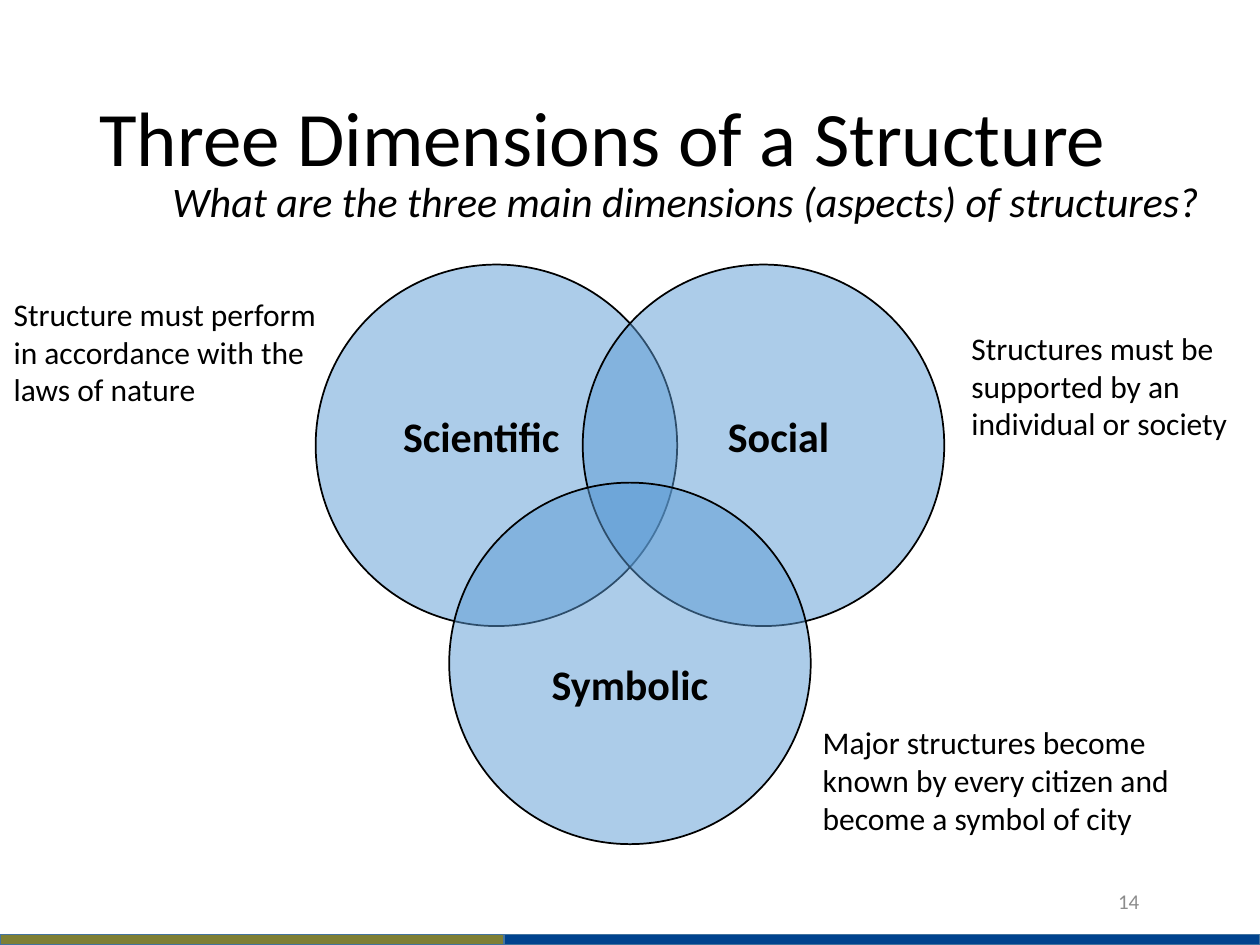
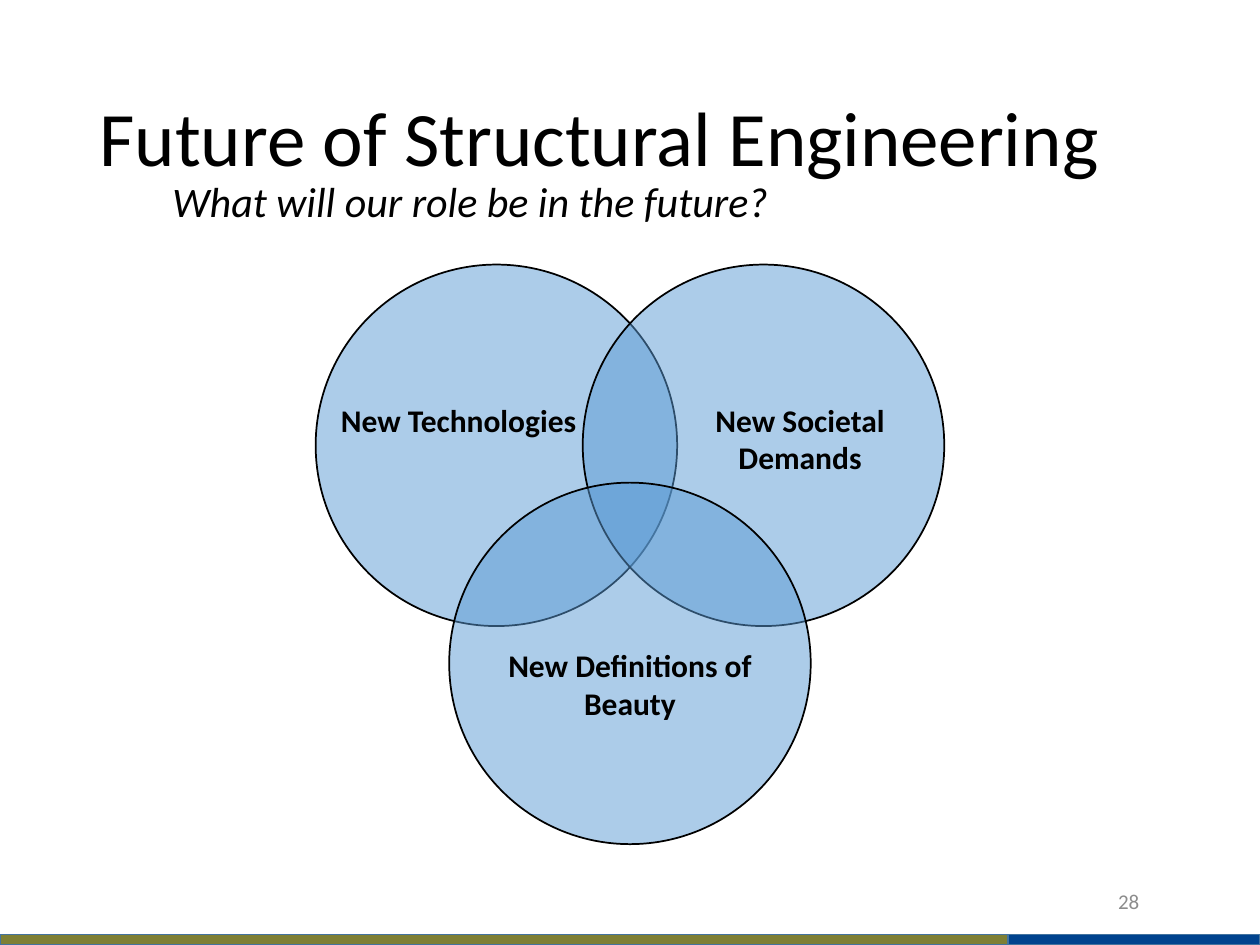
from pptx import Presentation
from pptx.dml.color import RGBColor
from pptx.enum.shapes import MSO_SHAPE as SHAPE
from pptx.enum.text import MSO_ANCHOR as ANCHOR, PP_ALIGN as ALIGN
from pptx.oxml.ns import qn
from pptx.util import Pt
from lxml.etree import SubElement

BLACK = RGBColor(0x00, 0x00, 0x00)
GREY = RGBColor(0x8C, 0x8C, 0x8C)
CIRCLE_BLUE = RGBColor(0x5B, 0x9B, 0xD5)
BAND_BLUE = RGBColor(0x00, 0x43, 0x8E)
BAND_OLIVE = RGBColor(0x7E, 0x7F, 0x34)
BAND_EDGE = RGBColor(0x43, 0x73, 0x9E)

WIDTH, HEIGHT = 720, 540
DIAMETER = 206.6
BAND_TOP, BAND_HEIGHT = 534, 6
# Horizontal offset of each circle's centre from the slide centre, and its top
CIRCLES = [(-76.3, 151.2), (76.3, 151.2), (0, 275.8)]

TITLE = {"size": Pt(44)}
QUESTION = {"size": Pt(24), "italic": True}
BIG_LABEL = {"size": Pt(24), "bold": True}
SMALL_LABEL = {"size": Pt(18), "bold": True}
NOTE = {"size": Pt(18)}
PAGE_NUMBER = {"size": Pt(12)}

# Labels and notes: text, (left, top, width, height)
SLIDES = [
    {
        "title": "Three Dimensions of a Structure",
        "question": "What are the three main dimensions (aspects) of structures?",
        "number": "14",
        "olive_share": 0.4,
        "label_style": BIG_LABEL,
        "labels": [
            ("Scientific", (198.7, 231.1, 152.6, 36)),
            ("Social", (368.6, 231.1, 152.6, 36)),
            ("Symbolic", (283.7, 373, 152.6, 36)),
        ],
        "notes": [
            ("Structure must perform in accordance with the laws of nature",
             (0.7, 164.9, 189.4, 72.7)),
            ("Structures must be supported by an individual or society",
             (548, 184.3, 165.6, 72.7)),
            ("Major structures become known by every citizen and become a symbol of city",
             (463, 409.7, 222.5, 72.7)),
        ],
    },
    {
        "title": "Future of Structural Engineering",
        "question": "What will our role be in the future?",
        "number": "28",
        "olive_share": 0.8,
        "label_style": SMALL_LABEL,
        "labels": [
            ("New Technologies", (185.8, 225.4, 152.6, 29)),
            ("New Societal Demands", (380.9, 225.4, 152.6, 51)),
            ("New Definitions of Beauty", (258.5, 365.8, 203, 51)),
        ],
        "notes": [],
    },
]


def add_text(slide, text, box, style, align=ALIGN.LEFT, anchor=ANCHOR.TOP, color=BLACK):
    frame = slide.shapes.add_textbox(*map(Pt, box)).text_frame
    frame.word_wrap = True
    frame.vertical_anchor = anchor
    paragraph = frame.paragraphs[0]
    paragraph.text = text
    paragraph.alignment = align
    font = paragraph.runs[0].font
    font.name = "Calibri"
    font.color.rgb = color
    for attribute, value in style.items():
        setattr(font, attribute, value)
    return paragraph


def add_filled(slide, kind, box, fill, edge, edge_width):
    shape = slide.shapes.add_shape(kind, *map(Pt, box))
    shape.shadow.inherit = False
    shape.fill.solid()
    shape.fill.fore_color.rgb = fill
    shape.line.color.rgb = edge
    shape.line.width = Pt(edge_width)
    return shape


deck = Presentation()
deck.slide_width, deck.slide_height = Pt(WIDTH), Pt(HEIGHT)

for content in SLIDES:
    slide = deck.slides.add_slide(deck.slide_layouts[6])

    title = add_text(slide, content["title"], (49.7, 28.8, 620.6, 104.4), TITLE,
                     anchor=ANCHOR.MIDDLE)
    title.line_spacing = 0.9
    add_text(slide, content["number"], (574.6, 500.4, 83.5, 28.8), PAGE_NUMBER,
             ALIGN.RIGHT, ANCHOR.MIDDLE, GREY)

    for offset, top in CIRCLES:
        left = (WIDTH - DIAMETER) / 2 + offset
        circle = add_filled(slide, SHAPE.OVAL, (left, top, DIAMETER, DIAMETER),
                            CIRCLE_BLUE, BLACK, 1)
        color = circle.fill._xPr.find(qn("a:solidFill"))[0]
        SubElement(color, qn("a:alpha"), val="50000")

    add_text(slide, content["question"], (91.4, 96.5, 622, 36), QUESTION)
    for label, box in content["labels"]:
        add_text(slide, label, box, content["label_style"], ALIGN.CENTER)
    for note, box in content["notes"]:
        add_text(slide, note, box, NOTE)

    for share, fill in [(1, BAND_BLUE), (content["olive_share"], BAND_OLIVE)]:
        add_filled(slide, SHAPE.RECTANGLE, (0, BAND_TOP, WIDTH * share, BAND_HEIGHT),
                   fill, BAND_EDGE, 0)

deck.save("out.pptx")
